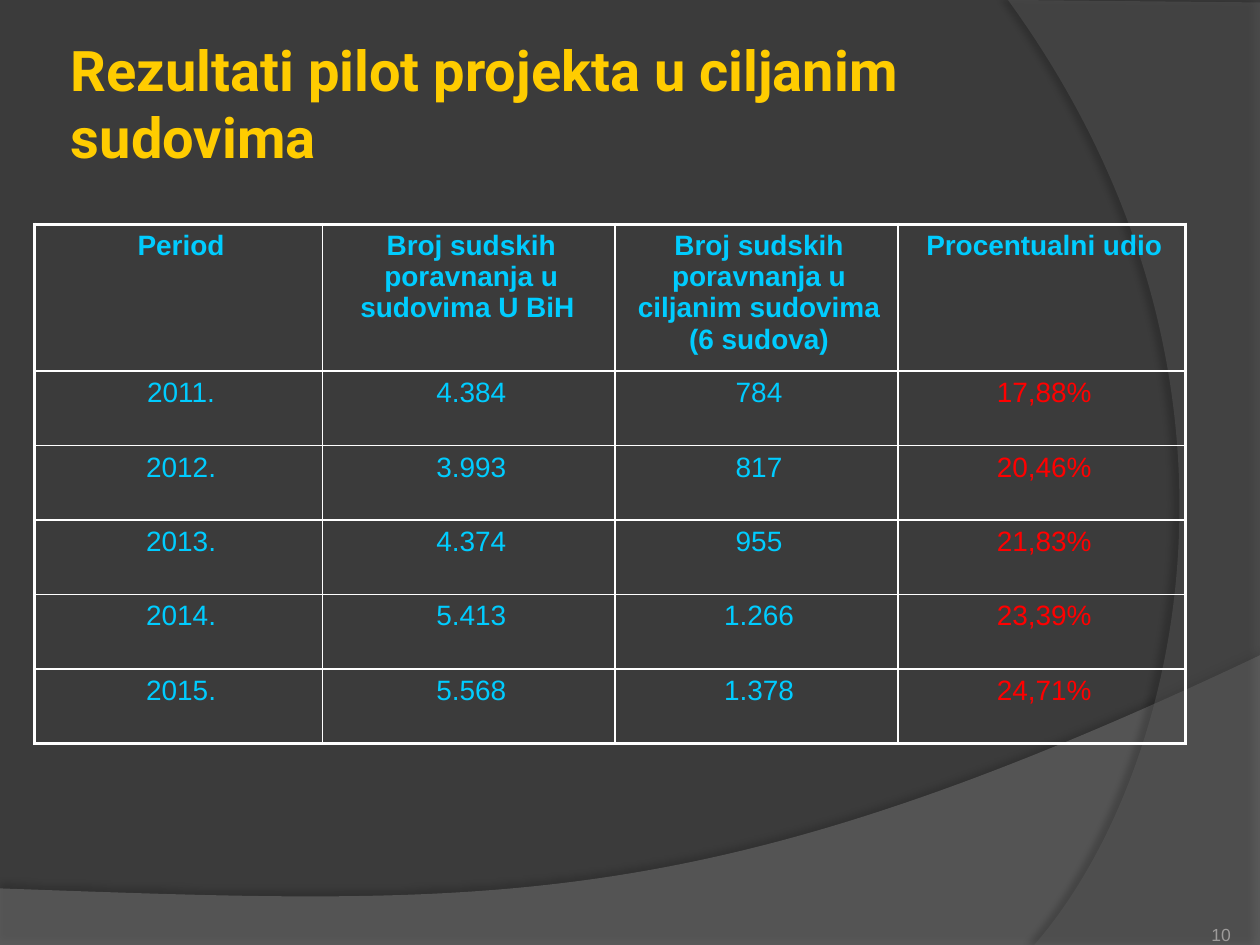
from dataclasses import dataclass

from lxml import etree
from pptx import Presentation, util as u
from pptx.dml.color import RGBColor
from pptx.enum import text
from pptx.oxml import ns


@dataclass(frozen=True)
class Theme:
    background: str = "3B3B3B"
    wave: str = "7F7F7F"
    arc: str = "5E5E5E"
    title: str = "FFCC00"
    body: str = "00CCFF"
    share: str = "FF0000"
    number: str = "9D9B9A"
    border: str = "FFFFFF"
    title_font: str = "Roboto"
    body_font: str = "Arial"
    title_size: int = 32
    body_size: int = 16
    number_size: int = 10
    outer_line: float = 2.25
    inner_line: float = 1


def add_xml(parent, tag, **attributes):
    child = etree.SubElement(parent, ns.qn(tag))
    for key, value in attributes.items():
        child.set(key, str(value))
    return child


def style(paragraph, font, size, color, bold=False):
    for run in paragraph.runs:
        run.font.name = font
        run.font.size = u.Pt(size)
        run.font.bold = bold
        run.font.color.rgb = RGBColor.from_string(color)


theme = Theme()
prs = Presentation()
prs.slide_width, prs.slide_height = u.Cm(25.4), u.Cm(19.05)
slide = prs.slides.add_slide(prs.slide_layouts[5])
slide.background.fill.solid()
slide.background.fill.fore_color.rgb = RGBColor.from_string(theme.background)
title = slide.shapes.title

swooshes = [
    ([(0, 17.91), (0, 19.07), (25.4, 19.07), (25.4, 13.21)],
     [(14.2, 18.52), (9.93, 18.26), (0, 17.91)], theme.wave, 45, 35, 4, 3.5, 270),
    ([(25.4, 0.05), (25.4, 19.05), (20.85, 19.05)],
     [(23.75, 15.72), (25.86, 7.62), (20.32, 0)], theme.arc, 40, 45, 4, 4, 180),
]
for corners, bend, color, alpha, shade, blur, distance, angle in swooshes:
    outline = [(u.Cm(x), u.Cm(y)) for x, y in corners + bend[-1:]]
    builder = slide.shapes.build_freeform(*outline[0])
    builder.add_line_segments(outline[1:], close=False)
    swoosh = builder.convert_to_shape()
    properties = swoosh._element.spPr
    straight_end = properties.findall(".//" + ns.qn("a:lnTo"))[-1]
    contour = straight_end.getparent()
    contour.remove(straight_end)
    curve = add_xml(contour, "a:cubicBezTo")
    for x, y in bend:
        add_xml(curve, "a:pt", x=u.Cm(x) - swoosh.left, y=u.Cm(y) - swoosh.top)
    add_xml(contour, "a:close")
    swoosh.fill.solid()
    swoosh.fill.fore_color.rgb = RGBColor.from_string(color)
    swoosh.line.fill.background()
    swoosh.shadow.inherit = False
    add_xml(properties.find(".//" + ns.qn("a:srgbClr")), "a:alpha", val=alpha * 1000)
    shadow = add_xml(properties.find(ns.qn("a:effectLst")), "a:outerShdw", blurRad=u.Pt(blur),
                     dist=u.Pt(distance), dir=angle * 60000, algn="ctr", rotWithShape=0)
    add_xml(add_xml(shadow, "a:srgbClr", val="000000"), "a:alpha", val=shade * 1000)
    title._element.addprevious(swoosh._element)

title.left, title.top, title.width, title.height = u.Cm(1.3), u.Cm(0.71), u.Cm(20.75), u.Cm(3.18)
heading = title.text_frame
heading.text = "Rezultati pilot projekta u ciljanim sudovima"
heading.auto_size = text.MSO_AUTO_SIZE.NONE
heading.vertical_anchor = text.MSO_ANCHOR.TOP
heading.margin_left = heading.margin_right = u.Cm(0.13)
heading.margin_top = heading.margin_bottom = 0
heading.paragraphs[0].alignment = text.PP_ALIGN.LEFT
style(heading.paragraphs[0], theme.title_font, theme.title_size, theme.title, True)

page = slide.shapes.add_textbox(u.Cm(22.71), u.Cm(18.03), u.Cm(2.1), u.Cm(1.02)).text_frame
page.word_wrap = True
page.vertical_anchor = text.MSO_ANCHOR.BOTTOM
page.margin_left = page.margin_right = page.margin_top = page.margin_bottom = 0
page.text = "10"
page.paragraphs[0].alignment = text.PP_ALIGN.RIGHT
style(page.paragraphs[0], theme.body_font, theme.number_size, theme.number)

results = [
    ("Period", "Broj sudskih poravnanja u sudovima U BiH ",
     "Broj sudskih poravnanja u ciljanim sudovima (6 sudova)", "Procentualni udio"),
    ("2011.", "4.384", "784", "17,88%"),
    ("2012.", "3.993", "817", "20,46%"),
    ("2013.", "4.374", "955", "21,83%"),
    ("2014.", "5.413", "1.266", "23,39%"),
    ("2015.", "5.568", "1.378", "24,71%"),
]
widths = [5.8, 5.9, 5.7, 5.8]
heights = [2.8] + [1.5] * 5
last_row, last_column = len(heights) - 1, len(widths) - 1
table = slide.shapes.add_table(len(heights), len(widths), u.Cm(0.7), u.Cm(4.52),
                               u.Cm(sum(widths)), u.Cm(sum(heights))).table
table.first_row = table.horz_banding = False
for column, width in zip(table.columns, widths):
    column.width = u.Cm(width)
for row, height in zip(table.rows, heights):
    row.height = u.Cm(height)

for r, record in enumerate(results):
    for c, entry in enumerate(record):
        cell = table.cell(r, c)
        cell.text_frame.text = entry
        paragraph = cell.text_frame.paragraphs[0]
        paragraph.alignment = text.PP_ALIGN.CENTER
        paragraph_properties = paragraph._p.get_or_add_pPr()
        paragraph_properties.set("marL", str(u.Cm(0.1)))
        add_xml(add_xml(paragraph_properties, "a:spcBef"), "a:spcPct", val=20000)
        style(paragraph, theme.body_font, theme.body_size,
              theme.share if r and c == last_column else theme.body, r == 0)
        cell_properties = cell._tc.get_or_add_tcPr()
        edges = {"a:lnL": c == 0, "a:lnR": c == last_column, "a:lnT": r == 0, "a:lnB": r == last_row}
        for tag, outer in edges.items():
            edge = add_xml(cell_properties, tag,
                           w=u.Pt(theme.outer_line if outer else theme.inner_line))
            add_xml(add_xml(edge, "a:solidFill"), "a:srgbClr", val=theme.border)
        cell.fill.background()

prs.save("out.pptx")
